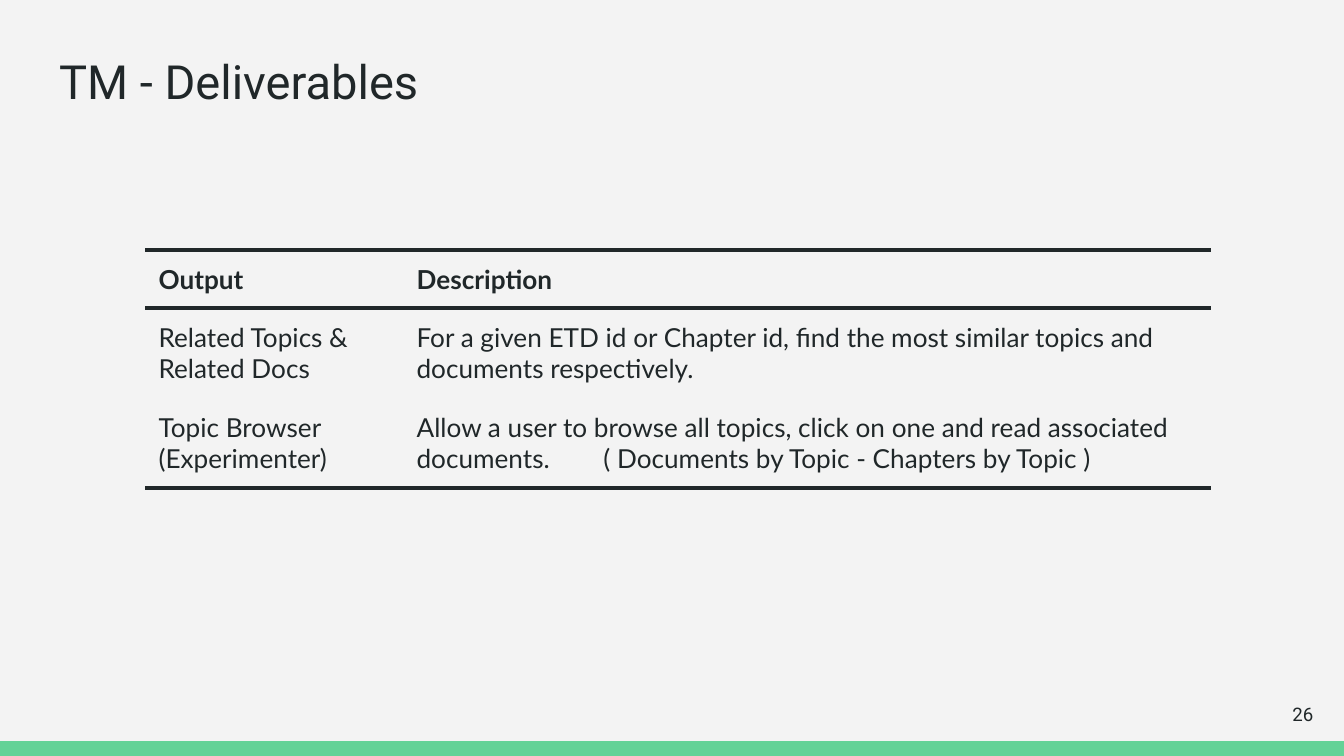
import pptx
import pptx.dml.color
import pptx.enum.shapes
import pptx.enum.text
import pptx.oxml
import pptx.oxml.ns
import pptx.util

WIDTH = 10
HEIGHT = WIDTH * 9 / 16
INK, GREEN, PAPER = "202729", "63D297", "F3F3F3"
INSET = 0.1
COLUMNS = [1.92, 6.01]
ROWS = [0.43, 0.67, 0.67]
CONTENT = [
    ("Output", "Description"),
    ("Related Topics & Related Docs",
     "For a given ETD id or Chapter id, find the most similar topics "
     "and documents respectively."),
    ("Topic Browser (Experimenter)",
     "Allow a user to browse all topics, click on one and read associated "
     "documents.\t( Documents by Topic - Chapters by Topic )"),
]
RULED_SIDES = ["TB", "T", "B"]
ALIGN = pptx.enum.text.PP_ALIGN
ANCHOR = pptx.enum.text.MSO_ANCHOR
NS = pptx.oxml.ns.nsdecls("a")


def inches(*values):
    return [pptx.util.Inches(v) for v in values]


def rgb(color):
    return pptx.dml.color.RGBColor.from_string(color)


def place(s, left, top, width, height):
    s.left, s.top, s.width, s.height = inches(left, top, width, height)


def set_insets(target):
    """Give a text frame or a table cell the same margin on all sides."""
    (target.margin_left, target.margin_top,
     target.margin_right, target.margin_bottom) = inches(*[INSET] * 4)


def add_run(p, text, size, font, bold=False):
    r = p.add_run()
    r.text = text
    r.font.size = pptx.util.Pt(size)
    r.font.name = font
    r.font.bold = bold
    r.font.color.rgb = rgb(INK)


def write_frame(s, text, size, align, anchor):
    tf = s.text_frame
    tf.word_wrap = True
    tf.auto_size = pptx.enum.text.MSO_AUTO_SIZE.NONE
    tf.vertical_anchor = anchor
    set_insets(tf)
    p = tf.paragraphs[0]
    p.alignment = align
    add_run(p, text, size, "Roboto")


def add_footer_band(slide):
    s = slide.shapes.add_shape(
        pptx.enum.shapes.MSO_SHAPE.RECTANGLE,
        *inches(0, HEIGHT - 0.11, WIDTH, 0.11))
    s.shadow.inherit = False
    s.fill.solid()
    s.fill.fore_color.rgb = rgb(GREEN)
    s.line.fill.background()


def add_tab_stop(p, position):
    tabs = pptx.oxml.parse_xml(
        f'<a:tabLst {NS}><a:tab pos="{pptx.util.Inches(position)}" algn="l"/></a:tabLst>')
    p._p.get_or_add_pPr().append(tabs)


def set_borders(cell, ruled_sides):
    """Rule the named sides (L, R, T, B) and clear the others."""
    tc_pr = cell._tc.get_or_add_tcPr()
    for i, side in enumerate("LRTB"):
        fill = (f'<a:solidFill><a:srgbClr val="{INK}"/></a:solidFill>'
                if side in ruled_sides else "<a:noFill/>")
        tc_pr.insert(i, pptx.oxml.parse_xml(
            f'<a:ln{side} {NS} w="{pptx.util.Pt(2.25)}">{fill}</a:ln{side}>'))


def add_deliverables_table(slide):
    frame = slide.shapes.add_table(
        len(ROWS), len(COLUMNS), *inches(1.08, 1.86, sum(COLUMNS), sum(ROWS)))
    table = frame.table
    table.first_row = table.horz_banding = False
    for column, width in zip(table.columns, inches(*COLUMNS)):
        column.width = width
    for row, height in zip(table.rows, inches(*ROWS)):
        row.height = height
    for i, texts in enumerate(CONTENT):
        for j, text in enumerate(texts):
            cell = table.cell(i, j)
            cell.fill.background()
            set_insets(cell)
            set_borders(cell, RULED_SIDES[i])
            p = cell.text_frame.paragraphs[0]
            if "\t" in text:
                add_tab_stop(p, 1.39)
            add_run(p, text, 14, "Lato", bold=i == 0)


def main():
    prs = pptx.Presentation()
    prs.slide_width, prs.slide_height = inches(WIDTH, HEIGHT)
    slide = prs.slides.add_slide(prs.slide_layouts[5])
    slide.background.fill.solid()
    slide.background.fill.fore_color.rgb = rgb(PAPER)

    add_footer_band(slide)
    title = slide.shapes.title
    place(title, 0.34, 0.29, 9.32, 0.63)
    write_frame(title, "TM - Deliverables", 25.2, ALIGN.LEFT, ANCHOR.TOP)
    number = slide.shapes.add_textbox(*inches(9.27, 5.1, 0.6, 0.43))
    write_frame(number, "26", 10, ALIGN.RIGHT, ANCHOR.MIDDLE)
    add_deliverables_table(slide)
    prs.save("out.pptx")


if __name__ == "__main__":
    main()
